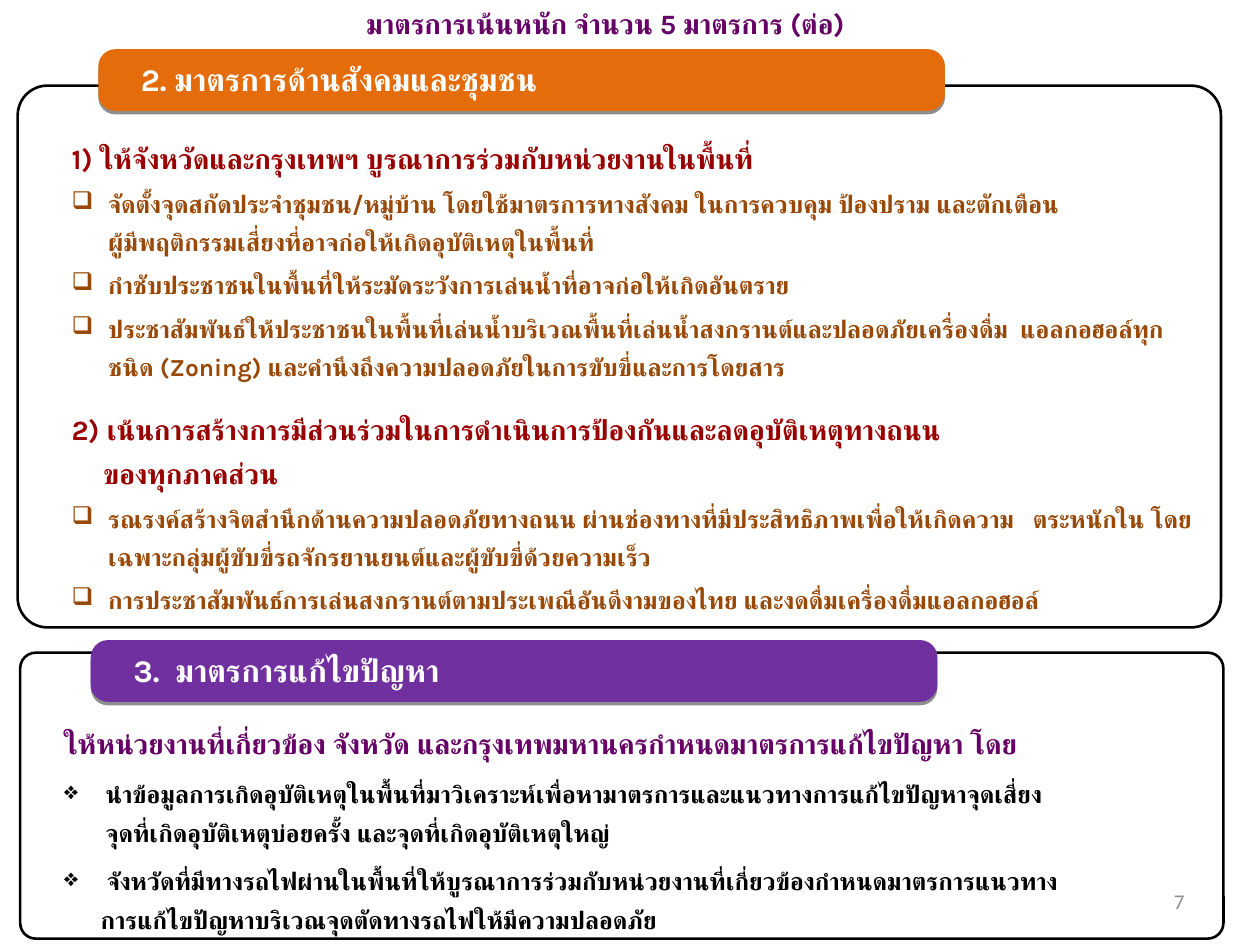
from lxml.etree import SubElement
from pptx import Presentation
from pptx.dml.color import RGBColor
from pptx.enum.shapes import MSO_SHAPE
from pptx.enum.text import MSO_ANCHOR as ANCHOR, MSO_AUTO_SIZE as AUTO_SIZE, PP_ALIGN as ALIGN
from pptx.oxml.ns import qn
from pptx.util import Inches, Pt

COLORS = {
    "white": "FFFFFF", "black": "000000", "orange": "E46C0A", "purple": "7030A0",
    "plum": "660066", "red": "990000", "brown": "984807", "gray": "8C8C8C",
    "shadow": "1C1C1C",
}
TITLE = "มาตรการเน้นหนัก จำนวน 5 มาตรการ (ต่อ)"
PAGE_NUMBER = "7"

SECTIONS = [
    {
        "heading": "2. มาตรการด้านสังคมและชุมชน",
        "color": "orange", "panel": (0.14, 0.68, 9.55, 4.3), "banner": (0.78, 0.39),
        "body": (0.47, 0.97, 9.22, 3.98),
        "lead": "red", "item": "brown", "bullet": "❑",
        "lines": [
            ("lead", 0, 6, "1) ให้จังหวัดและกรุงเทพฯ บูรณาการร่วมกับหน่วยงานในพื้นที่"),
            ("item", 0.29, 3, "จัดตั้งจุดสกัดประจำชุมชน/หมู่บ้าน โดยใช้มาตรการทางสังคม ในการควบคุม ป้องปราม และตักเตือน\n"
             "ผู้มีพฤติกรรมเสี่ยงที่อาจก่อให้เกิดอุบัติเหตุในพื้นที่"),
            ("item", 0.29, 3, "กำชับประชาชนในพื้นที่ให้ระมัดระวังการเล่นน้ำที่อาจก่อให้เกิดอันตราย"),
            ("item", 0.29, 3, "ประชาสัมพันธ์ให้ประชาชนในพื้นที่เล่นน้ำบริเวณพื้นที่เล่นน้ำสงกรานต์และปลอดภัยเครื่องดื่ม  "
             "แอลกอฮอล์ทุกชนิด (Zoning) และคำนึงถึงความปลอดภัยในการขับขี่และการโดยสาร"),
            ("lead", 0.25, 12, "2) เน้นการสร้างการมีส่วนร่วมในการดำเนินการป้องกันและลดอุบัติเหตุทางถนน\n"
             "ของทุกภาคส่วน"),
            ("item", 0.29, 3, "รณรงค์สร้างจิตสำนึกด้านความปลอดภัยทางถนน ผ่านช่องทางที่มีประสิทธิภาพเพื่อให้เกิดความ   "
             "ตระหนักใน โดยเฉพาะกลุ่มผู้ขับขี่รถจักรยานยนต์และผู้ขับขี่ด้วยความเร็ว"),
            ("item", 0.29, 3, "การประชาสัมพันธ์การเล่นสงกรานต์ตามประเพณีอันดีงามของไทย และงดดื่มเครื่องดื่มแอลกอฮอล์"),
        ],
    },
    {
        "heading": "3.  มาตรการแก้ไขปัญหา",
        "color": "purple", "panel": (0.16, 5.18, 9.55, 2.27), "banner": (0.72, 5.08),
        "body": (0.41, 5.63, 9.52, 1.84),
        "lead": "plum", "item": "black", "bullet": "❖",
        "lines": [
            ("lead", 0, 6, "ให้หน่วยงานที่เกี่ยวข้อง จังหวัด และกรุงเทพมหานครกำหนดมาตรการแก้ไขปัญหา โดย"),
            ("item", 0.33, 6, "นำข้อมูลการเกิดอุบัติเหตุในพื้นที่มาวิเคราะห์เพื่อหามาตรการและแนวทางการแก้ไขปัญหาจุดเสี่ยง\n"
             "จุดที่เกิดอุบัติเหตุบ่อยครั้ง และจุดที่เกิดอุบัติเหตุใหญ่"),
            ("item", 0.29, 6, " จังหวัดที่มีทางรถไฟผ่านในพื้นที่ให้บูรณาการร่วมกับหน่วยงานที่เกี่ยวข้องกำหนดมาตรการแนวทาง\n"
             "การแก้ไขปัญหาบริเวณจุดตัดทางรถไฟให้มีความปลอดภัย"),
        ],
    },
]
SIZES = {"lead": 16, "item": 14}


def rgb(color):
    return RGBColor.from_string(COLORS[color])


def write(paragraph, text, size, color, bold=True, font="Karla"):
    paragraph.text = text
    for run in paragraph.runs:
        run.font.name = font
        run.font.size = Pt(size)
        run.font.bold = bold
        run.font.color.rgb = rgb(color)
        SubElement(run.font._element, qn("a:cs"), typeface=font)


def rounded(shapes, box, radius, fill, line=None):
    panel = shapes.add_shape(MSO_SHAPE.ROUNDED_RECTANGLE, *map(Inches, box))
    panel.adjustments[0] = radius
    panel.shadow.inherit = False
    panel.fill.solid()
    panel.fill.fore_color.rgb = rgb(fill)
    if line:
        panel.line.color.rgb = rgb(line)
        panel.line.width = Pt(1.5)
    else:
        panel.line.fill.background()
    return panel


def add_shadow(banner):
    effects = banner._element.spPr.find(qn("a:effectLst"))
    shadow = SubElement(effects, qn("a:outerShdw"), blurRad="0", dist=str(Pt(2)),
                        dir="5400000", algn="t", rotWithShape="0")
    tint = SubElement(shadow, qn("a:srgbClr"), val=COLORS["shadow"])
    SubElement(tint, qn("a:alpha"), val="50000")


def text_frame(slide, box, anchor=ANCHOR.TOP, grow=True):
    frame = slide.shapes.add_textbox(*map(Inches, box)).text_frame
    frame.word_wrap = True
    frame.vertical_anchor = anchor
    if grow:
        frame.auto_size = AUTO_SIZE.SHAPE_TO_FIT_TEXT
    return frame


def add_banner(slide, section):
    left, top = section["banner"]
    group = slide.shapes.add_group_shape()
    base = rounded(group.shapes, (left, top, 6.72, 0.49), 0.279, section["color"])
    add_shadow(base)
    rounded(group.shapes, (left + 0.05, top, 6.62, 0.22), 0.5, section["color"])
    heading = text_frame(slide, (left + 0.24, top + 0.04, 4.77, 0.4))
    write(heading.paragraphs[0], section["heading"], 18, "white")


def add_body(slide, section):
    body = text_frame(slide, section["body"], ANCHOR.MIDDLE)
    for index, (role, indent, gap, text) in enumerate(section["lines"]):
        paragraph = body.add_paragraph() if index else body.paragraphs[0]
        write(paragraph, text, SIZES[role], section[role])
        paragraph.line_spacing = 1.3
        paragraph.space_before = Pt(gap)
        properties = paragraph._p.get_or_add_pPr()
        properties.set("marL", str(Inches(indent)))
        properties.set("indent", str(-Inches(indent)))
        if role == "item":
            SubElement(properties, qn("a:buChar"), char=section["bullet"])


def add_title(slide):
    title = slide.shapes.title
    title.left, title.top, title.width, title.height = map(Inches, (2.19, 0, 5.23, 0.37))
    frame = title.text_frame
    frame.word_wrap = True
    frame.vertical_anchor = ANCHOR.TOP
    frame.auto_size = AUTO_SIZE.SHAPE_TO_FIT_TEXT
    write(frame.paragraphs[0], TITLE, 16, "plum")
    frame.paragraphs[0].alignment = ALIGN.CENTER


def main():
    deck = Presentation()
    deck.slide_width, deck.slide_height = Inches(10), Inches(7.5)
    slide = deck.slides.add_slide(deck.slide_layouts[5])
    add_title(slide)
    for section in SECTIONS:
        rounded(slide.shapes, section["panel"], 0.055, "white", "black")
        add_banner(slide, section)
        add_body(slide, section)
    number = text_frame(slide, (7.17, 6.95, 2.33, 0.4), ANCHOR.MIDDLE, grow=False)
    write(number.paragraphs[0], PAGE_NUMBER, 12, "gray", False, "Calibri")
    number.paragraphs[0].alignment = ALIGN.RIGHT
    deck.save("out.pptx")


if __name__ == "__main__":
    main()
